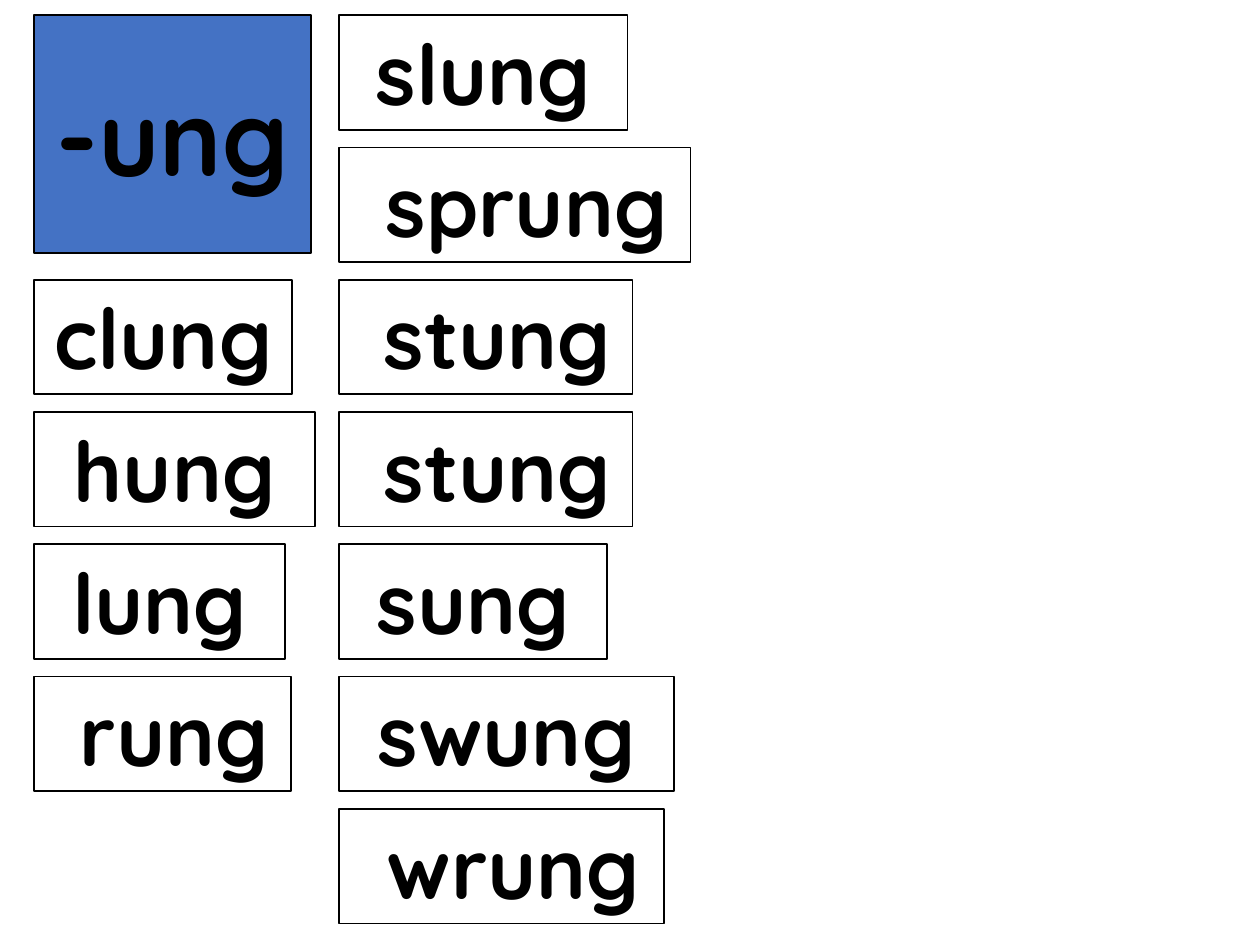
from pptx import Presentation
from pptx.dml.color import RGBColor
from pptx.enum.shapes import MSO_SHAPE
from pptx.enum.text import MSO_ANCHOR, MSO_AUTO_SIZE, PP_ALIGN
from pptx.util import Inches, Pt

COLORS = {"ink": "000000", "card": "FFFFFF", "header": "4472C4"}
CARD_HEIGHT = 0.91
ROW_PITCH = 1.05
TOP = 0.12
WORD_FRAME = {
    "word_wrap": False,
    "auto_size": MSO_AUTO_SIZE.SHAPE_TO_FIT_TEXT,
    "vertical_anchor": MSO_ANCHOR.TOP,
}
HEADER_FRAME = {"word_wrap": True, "vertical_anchor": MSO_ANCHOR.MIDDLE}
LEFT_WORDS = [("clung", 2.05), (" hung ", 2.23), (" lung ", 1.99), (" rung ", 2.04)]
RIGHT_WORDS = [
    (" slung ", 2.29),
    (" sprung ", 2.79),
    (" stung ", 2.33),
    (" stung ", 2.33),
    (" sung ", 2.13),
    (" swung ", 2.66),
    (" wrung ", 2.58),
]


def apply_format(target, values):
    """Set each named attribute of the target."""
    for name, value in values.items():
        setattr(target, name, value)


def add_card(slide, box, text, fill, size, frame_format):
    """Place one outlined card with bold centred text in the given box."""
    card = slide.shapes.add_shape(MSO_SHAPE.RECTANGLE, *map(Inches, box))
    card.shadow.inherit = False
    card.fill.solid()
    card.fill.fore_color.rgb = RGBColor.from_string(COLORS[fill])
    card.line.color.rgb = RGBColor.from_string(COLORS["ink"])
    card.line.width = Pt(1)
    apply_format(card.text_frame, frame_format)
    paragraph = card.text_frame.paragraphs[0]
    paragraph.alignment = PP_ALIGN.CENTER
    word = paragraph.add_run()
    word.text = text
    apply_format(word.font, {"name": "Quicksand", "size": Pt(size), "bold": True})
    word.font.color.rgb = RGBColor.from_string(COLORS["ink"])


def add_word_column(slide, left, top, words):
    """Stack word cards downwards from the given corner."""
    for row, (word, width) in enumerate(words):
        box = (left, top + row * ROW_PITCH, width, CARD_HEIGHT)
        add_card(slide, box, word, "card", 48, WORD_FRAME)


def main():
    """Build the word family slide."""
    presentation = Presentation()
    apply_format(
        presentation, {"slide_width": Inches(10), "slide_height": Inches(7.5)}
    )
    slide = presentation.slides.add_slide(presentation.slide_layouts[6])
    add_word_column(slide, 2.69, TOP, RIGHT_WORDS)
    add_word_column(slide, 0.27, TOP + 2 * ROW_PITCH, LEFT_WORDS)
    add_card(slide, (0.27, TOP, 2.2, 1.89), "-ung", "header", 60, HEADER_FRAME)
    presentation.save("out.pptx")


if __name__ == "__main__":
    main()
